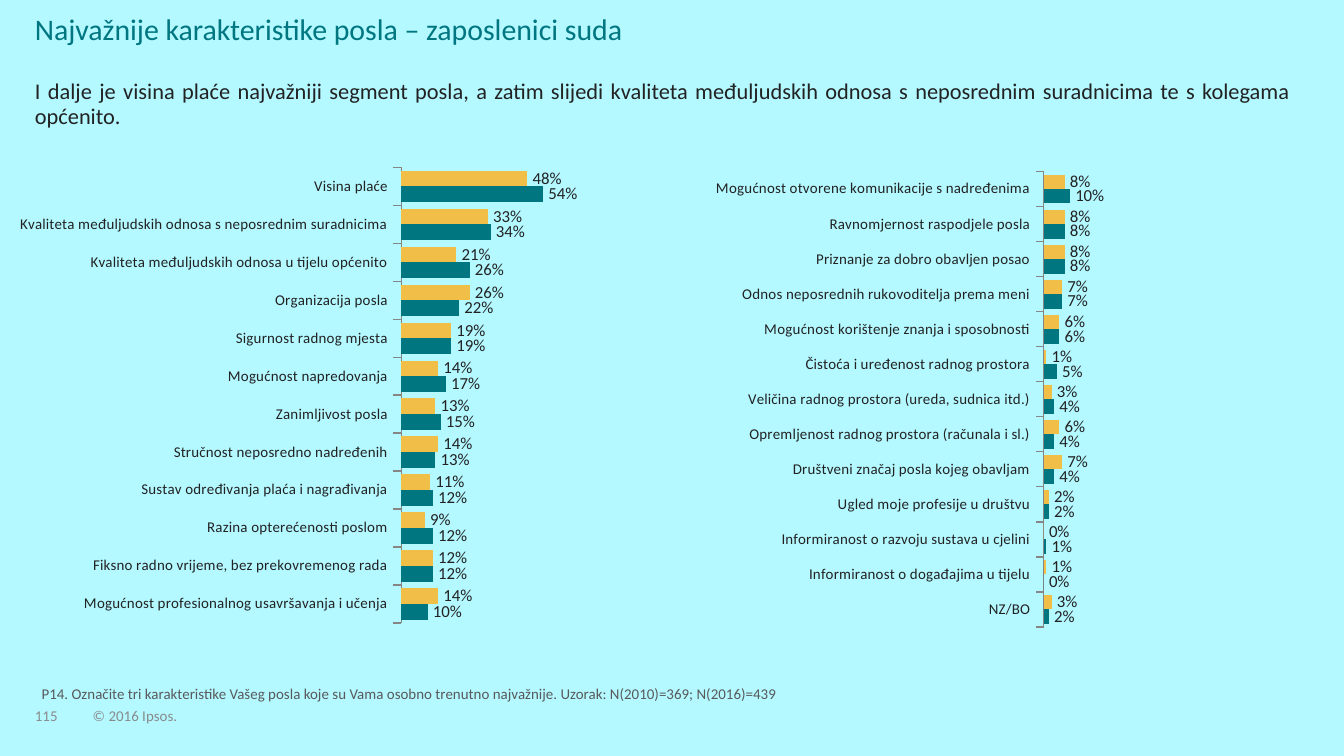
from dataclasses import dataclass

import pptx
import pptx.chart.data
import pptx.dml.color
import pptx.enum.chart
import pptx.enum.text
import pptx.oxml
import pptx.oxml.ns
import pptx.util
from pptx.util import Inches

ALIGN = pptx.enum.text.PP_ALIGN
ANCHOR = pptx.enum.text.MSO_ANCHOR
SLIDE_WIDTH = Inches(10)
SLIDE_HEIGHT = SLIDE_WIDTH * 9 // 16


def rgb(value):
    return pptx.dml.color.RGBColor.from_string(value)


@dataclass(frozen=True)
class Theme:
    font: str = "Calibri"
    background: str = "B3F9FF"
    teal: str = "007681"
    yellow: str = "F1BE48"
    ink: str = "222223"
    note: str = "58595B"
    footer: str = "888B8D"
    axis: str = "868686"
    title_size: int = 16
    body_size: int = 12
    label_size: int = 9
    small_size: int = 8


THEME = Theme()

# Each row: category, percentage in the first series, percentage in the second
LEADING = [
    ("Visina plaće", 48, 54),
    ("Kvaliteta međuljudskih odnosa s neposrednim suradnicima", 33, 34),
    ("Kvaliteta međuljudskih odnosa u tijelu općenito", 21, 26),
    ("Organizacija posla", 26, 22),
    ("Sigurnost radnog mjesta", 19, 19),
    ("Mogućnost napredovanja", 14, 17),
    ("Zanimljivost posla", 13, 15),
    ("Stručnost neposredno nadređenih", 14, 13),
    ("Sustav određivanja plaća i nagrađivanja", 11, 12),
    ("Razina opterećenosti poslom", 9, 12),
    ("Fiksno radno vrijeme, bez prekovremenog rada", 12, 12),
    ("Mogućnost profesionalnog usavršavanja i učenja", 14, 10),
]
REMAINING = [
    ("Mogućnost otvorene komunikacije s nadređenima", 8, 10),
    ("Ravnomjernost raspodjele posla", 8, 8),
    ("Priznanje za dobro obavljen posao", 8, 8),
    ("Odnos neposrednih rukovoditelja prema meni", 7, 7),
    ("Mogućnost korištenje znanja i sposobnosti", 6, 6),
    ("Čistoća i uređenost radnog prostora", 1, 5),
    ("Veličina radnog prostora (ureda, sudnica itd.)", 3, 4),
    ("Opremljenost radnog prostora (računala i sl.)", 6, 4),
    ("Društveni značaj posla kojeg obavljam", 7, 4),
    ("Ugled moje profesije u društvu", 2, 2),
    ("Informiranost o razvoju sustava u cjelini", 0, 1),
    ("Informiranost o događajima u tijelu", 1, 0),
    ("NZ/BO", 3, 2),
]


def format_font(font, size, color):
    font.name = THEME.font
    font.size = pptx.util.Pt(size)
    font.color.rgb = rgb(color)


def write_text(shape, text, *, size, color, align=ALIGN.LEFT, anchor=ANCHOR.TOP, spacing=1.0):
    frame = shape.text_frame
    frame.text = text
    frame.word_wrap = True
    frame.auto_size = pptx.enum.text.MSO_AUTO_SIZE.NONE
    frame.vertical_anchor = anchor
    frame.margin_left = frame.margin_right = frame.margin_top = frame.margin_bottom = 0
    paragraph = frame.paragraphs[0]
    paragraph.alignment = align
    paragraph.line_spacing = spacing
    format_font(paragraph.font, size, color)


def add_text(slide, box, text, **text_format):
    shape = slide.shapes.add_textbox(*(Inches(length) for length in box))
    write_text(shape, text, **text_format)


def add_heading(slide, box):
    left, top, width, height = box
    title = slide.shapes.title
    title.left, title.top = Inches(left), Inches(top)
    title.width, title.height = Inches(7.76), Inches(0.54)
    write_text(title, "Najvažnije karakteristike posla – zaposlenici suda",
               size=THEME.title_size, color=THEME.teal, spacing=0.9)
    add_text(slide, (left, top + 0.49, width, height - 0.49),
             "I dalje je visina plaće najvažniji segment posla, a zatim slijedi kvaliteta "
             "međuljudskih odnosa s neposrednim suradnicima te s kolegama općenito.",
             size=THEME.body_size, color=THEME.ink, align=ALIGN.JUSTIFY, spacing=0.9)


def set_plot_layout(chart, x, y, w, h):
    """Fix the inner plot area as fractions of the chart."""
    plot_area = chart.element.xpath("c:chart/c:plotArea")[0]
    for layout in plot_area.xpath("c:layout"):
        plot_area.remove(layout)
    sizes = "".join(f'<c:{name} val="{value}"/>'
                    for name, value in (("x", x), ("y", y), ("w", w), ("h", h)))
    plot_area.insert(0, pptx.oxml.parse_xml(
        f'<c:layout {pptx.oxml.ns.nsdecls("c")}><c:manualLayout>'
        '<c:layoutTarget val="inner"/><c:xMode val="edge"/><c:yMode val="edge"/>'
        f'{sizes}</c:manualLayout></c:layout>'))


def add_bar_chart(slide, box, rows):
    categories, *columns = zip(*rows)
    data = pptx.chart.data.CategoryChartData(number_format="0%")
    data.categories = categories
    for number, column in enumerate(columns, start=1):
        data.add_series(f"Series {number}", [percent / 100 for percent in column])
    chart = slide.shapes.add_chart(
        pptx.enum.chart.XL_CHART_TYPE.BAR_CLUSTERED,
        *(Inches(length) for length in box), data).chart
    chart.has_title = chart.has_legend = False
    format_font(chart.font, THEME.label_size, THEME.ink)
    set_plot_layout(chart, 0.665, 0.002, 0.402, 0.998)

    category_axis = chart.category_axis
    category_axis.reverse_order = True
    category_axis.has_major_gridlines = False
    category_axis.major_tick_mark = pptx.enum.chart.XL_TICK_MARK.OUTSIDE
    category_axis.format.line.color.rgb = rgb(THEME.axis)
    format_font(category_axis.tick_labels.font, THEME.small_size, THEME.ink)

    value_axis = chart.value_axis
    value_axis.minimum_scale, value_axis.maximum_scale = 0, 1
    value_axis.major_unit = 1
    value_axis.has_major_gridlines = False
    value_axis.visible = False

    plot = chart.plots[0]
    plot.gap_width = 42
    plot.overlap = 0
    plot.vary_by_categories = False
    for series, color in zip(plot.series, (THEME.yellow, THEME.teal)):
        series.format.fill.solid()
        series.format.fill.fore_color.rgb = rgb(color)
        labels = series.data_labels
        labels.show_value = True
        labels.number_format, labels.number_format_is_linked = "0%", False
        labels.position = pptx.enum.chart.XL_LABEL_POSITION.OUTSIDE_END
        format_font(labels.font, THEME.label_size, THEME.ink)


def add_footer(slide, box):
    left, top, width, height = box
    add_text(slide, (left + 0.05, top, width, 0.2),
             "P14. Označite tri karakteristike Vašeg posla koje su Vama osobno trenutno "
             "najvažnije. Uzorak: N(2010)=369; N(2016)=439",
             size=THEME.small_size, color=THEME.note, anchor=ANCHOR.BOTTOM)
    for offset, text_width, text in ((0, 0.34, "115"), (0.43, 0.76, "© 2016 Ipsos.")):
        add_text(slide, (left + offset, top + 0.2, text_width, height - 0.2), text,
                 size=THEME.small_size, color=THEME.footer, anchor=ANCHOR.BOTTOM, spacing=0.85)


def main():
    presentation = pptx.Presentation()
    presentation.slide_width, presentation.slide_height = SLIDE_WIDTH, SLIDE_HEIGHT
    slide = presentation.slides.add_slide(presentation.slide_layouts.get_by_name("Title Only"))
    slide.background.fill.solid()
    slide.background.fill.fore_color.rgb = rgb(THEME.background)

    add_heading(slide, (0.26, 0.11, 9.35, 0.86))
    add_bar_chart(slide, (0.08, 1.24, 4.86, 3.4), LEADING)
    add_bar_chart(slide, (4.86, 1.27, 4.86, 3.4), REMAINING)
    add_footer(slide, (0.26, 5.03, 8.13, 0.36))
    presentation.save("out.pptx")


if __name__ == "__main__":
    main()
